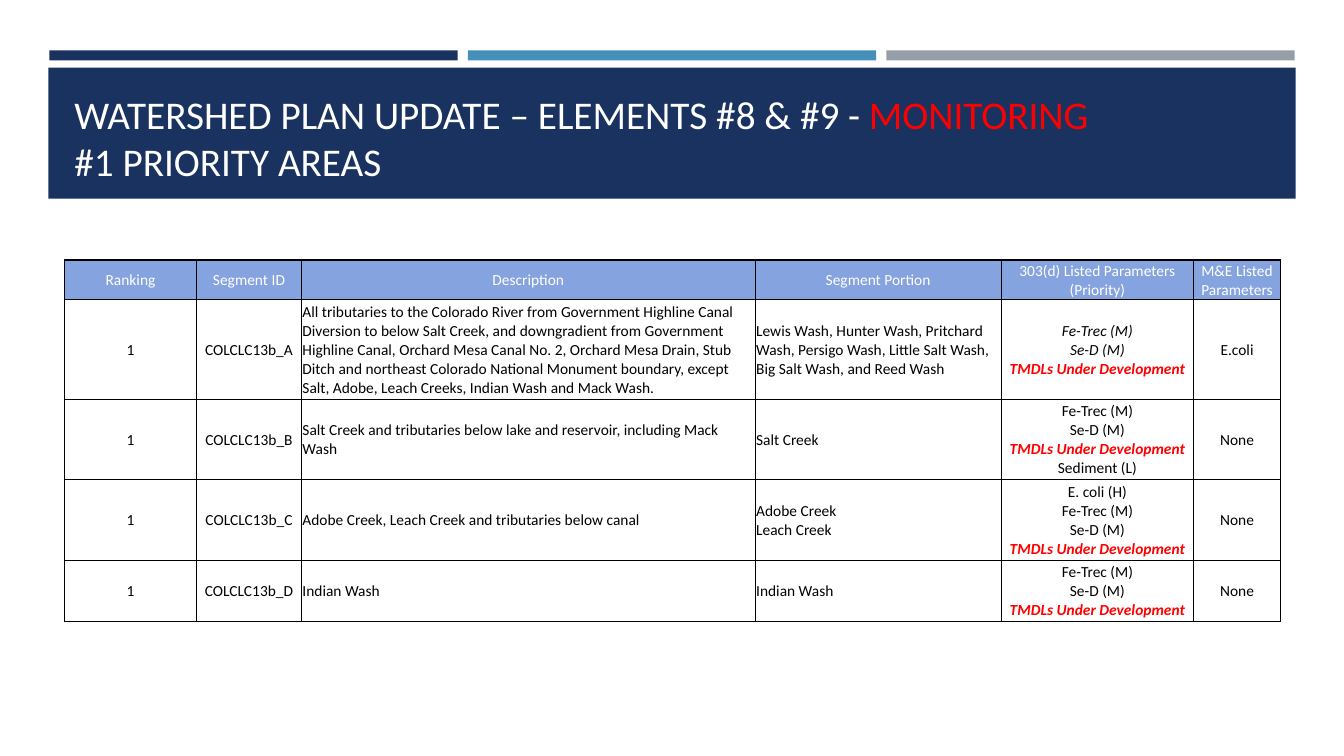
from copy import deepcopy
from dataclasses import dataclass

from lxml import etree
from pptx import Presentation
from pptx import util as u
from pptx.dml.color import RGBColor
from pptx.enum import shapes, text
from pptx.oxml.ns import qn

NAVY, BLUE, GREY, HEADER = "1A3260", "4590B8", "969FA7", "85A3DE"
WHITE, BLACK, RED = "FFFFFF", "000000", "FF0000"
TMDL = "TMDLs Under Development"
THIN, THICK = 0.5, 1


@dataclass
class Block:
    left: float
    top: float
    width: float
    height: float
    color: str


@dataclass
class Column:
    heading: str
    width: float
    centred: bool = True


@dataclass
class Segment:
    id: str
    height: float
    description: str
    portion: str
    listed: str
    monitored: str = "None"
    italic: bool = False


BLOCKS = [
    Block(0.49, 0.5, 4.05, 0.1, NAVY),
    Block(4.64, 0.5, 4.05, 0.1, BLUE),
    Block(8.79, 0.5, 4.05, 0.1, GREY),
    Block(0.48, 0.67, 12.37, 1.3, NAVY),
]
COLUMNS = [
    Column("Ranking", 1.31),
    Column("Segment ID", 1.04),
    Column("Description", 4.5, centred=False),
    Column("Segment Portion", 2.44, centred=False),
    Column("303(d) Listed Parameters (Priority)", 1.91),
    Column("M&E Listed Parameters", 0.86),
]
HEADER_HEIGHT = 0.39
SEGMENTS = [
    Segment("COLCLC13b_A", 0.99,
            "All tributaries to the Colorado River from Government Highline Canal "
            "Diversion to below Salt Creek, and downgradient from Government Highline "
            "Canal, Orchard Mesa Canal No. 2, Orchard Mesa Drain, Stub Ditch and "
            "northeast Colorado National Monument boundary, except Salt, Adobe, Leach "
            "Creeks, Indian Wash and Mack Wash.",
            "Lewis Wash, Hunter Wash, Pritchard Wash, Persigo Wash, Little Salt Wash, "
            "Big Salt Wash, and Reed Wash",
            f"Fe-Trec (M)\nSe-D (M)\n{TMDL}", "E.coli", italic=True),
    Segment("COLCLC13b_B", 0.8,
            "Salt Creek and tributaries below lake and reservoir, including Mack Wash",
            "Salt Creek", f"Fe-Trec (M)\nSe-D (M)\n{TMDL}\nSediment (L)"),
    Segment("COLCLC13b_C", 0.8, "Adobe Creek, Leach Creek and tributaries below canal",
            "Adobe Creek\nLeach Creek", f"E. coli (H)\nFe-Trec (M)\nSe-D (M)\n{TMDL}"),
    Segment("COLCLC13b_D", 0.61, "Indian Wash", "Indian Wash",
            f"Fe-Trec (M)\nSe-D (M)\n{TMDL}"),
]


def rgb(color: str) -> RGBColor:
    return RGBColor.from_string(color)


def write(p, content: str, *, size: float = 11, color: str = BLACK,
          bold: bool = False, italic: bool = False) -> None:
    """Append formatted text to a paragraph, with newlines as line breaks."""
    for i, line in enumerate(content.split("\n")):
        r = p.add_run()
        r.text = line
        f = r.font
        f.name, f.size, f.bold, f.italic = "Calibri", u.Pt(size), bold, italic
        f.color.rgb = rgb(color)
        if i:
            br = etree.Element(qn("a:br"))
            br.append(deepcopy(r._r.rPr))
            r._r.addprevious(br)
        if not line:
            p._p.remove(r._r)


def add_block(s, block: Block) -> None:
    sp = s.shapes.add_shape(
        shapes.MSO_SHAPE.RECTANGLE, u.Inches(block.left), u.Inches(block.top),
        u.Inches(block.width), u.Inches(block.height))
    sp.shadow.inherit = False
    sp.fill.solid()
    sp.fill.fore_color.rgb = rgb(block.color)
    sp.line.fill.background()


def add_title(s) -> None:
    sp = s.shapes.add_textbox(u.Inches(0.64), u.Inches(0.77), u.Inches(12.06), u.Inches(1.11))
    tf = sp.text_frame
    tf.word_wrap = True
    tf.vertical_anchor = text.MSO_ANCHOR.BOTTOM
    p = tf.paragraphs[0]
    write(p, "WATERSHED PLAN UPDATE – ELEMENTS #8 & #9 - ", size=28, color=WHITE)
    write(p, "MONITORING", size=28, color=RED)
    write(p, "\n#1 PRIORITY AREAS", size=28, color=WHITE)


def set_borders(cell, **widths: float) -> None:
    for side, width in widths.items():
        ln = etree.SubElement(cell._tc.get_or_add_tcPr(), qn(f"a:ln{side}"),
                              w=str(u.Pt(width)))
        fill = etree.SubElement(ln, qn("a:solidFill"))
        etree.SubElement(fill, qn("a:srgbClr"), val=BLACK)


def format_cell(cell, fill: str, centred: bool):
    """Style a table cell and return its paragraph."""
    cell.fill.solid()
    cell.fill.fore_color.rgb = rgb(fill)
    cell.vertical_anchor = text.MSO_ANCHOR.MIDDLE
    cell.margin_left = cell.margin_top = cell.margin_right = u.Inches(0.01)
    cell.margin_bottom = 0
    p = cell.text_frame.paragraphs[0]
    p.alignment = text.PP_ALIGN.CENTER if centred else text.PP_ALIGN.LEFT
    return p


def add_segment_table(s) -> None:
    heights = [HEADER_HEIGHT] + [seg.height for seg in SEGMENTS]
    last_row, last_col = len(SEGMENTS), len(COLUMNS) - 1
    table = s.shapes.add_table(
        len(heights), len(COLUMNS), u.Inches(0.64), u.Inches(2.58),
        u.Inches(sum(c.width for c in COLUMNS)), u.Inches(sum(heights))).table
    table.first_row = table.horz_banding = False
    for col, column in zip(table.columns, COLUMNS):
        col.width = u.Inches(column.width)
    for row, height in zip(table.rows, heights):
        row.height = u.Inches(height)

    for i in range(len(heights)):
        for j, column in enumerate(COLUMNS):
            cell = table.cell(i, j)
            set_borders(cell, L=THICK if j == 0 else THIN,
                        R=THICK if j == last_col else THIN,
                        T=THICK if i <= 1 else THIN,
                        B=THICK if i in (0, last_row) else THIN)
            if i == 0:
                write(format_cell(cell, HEADER, True), column.heading, color=WHITE)
                continue
            seg = SEGMENTS[i - 1]
            content = ("1", seg.id, seg.description, seg.portion, seg.listed,
                       seg.monitored)[j]
            p = format_cell(cell, WHITE, column.centred)
            before, tmdl, after = content.partition(TMDL)
            write(p, before, italic=seg.italic and bool(tmdl))
            if tmdl:
                write(p, tmdl, color=RED, bold=True, italic=True)
                write(p, after)


def main() -> None:
    prs = Presentation()
    prs.slide_width, prs.slide_height = u.Inches(13.33), u.Inches(7.5)
    s = prs.slides.add_slide(prs.slide_layouts[6])
    for block in BLOCKS:
        add_block(s, block)
    add_title(s)
    add_segment_table(s)
    prs.save("out.pptx")


if __name__ == "__main__":
    main()
